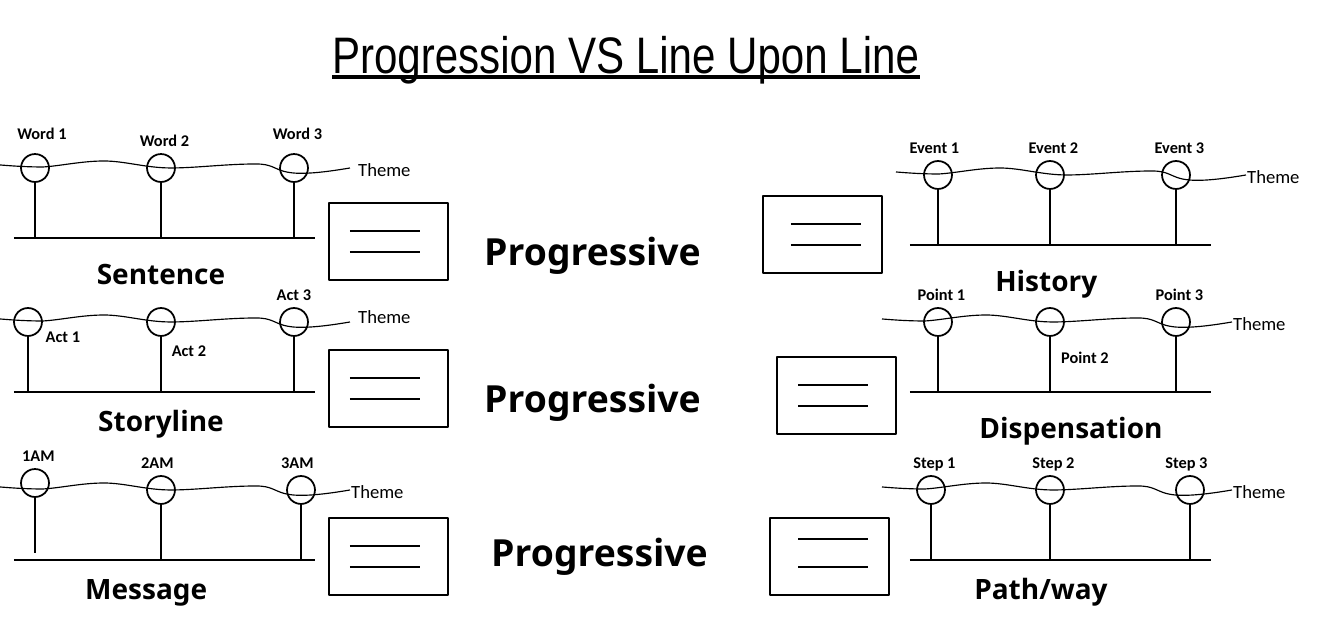
"""Build the slide that compares progression with line upon line."""
import dataclasses

import lxml.etree
import pptx
import pptx.dml.color
import pptx.enum.shapes
import pptx.enum.text
import pptx.oxml.ns
import pptx.util

PX = 914400 / 84
BLACK = "000000"
CIRCLE = 28
POST_HEIGHT = 56
BASE_LENGTH = 301
WAVE_RISE = 77
BOX_WIDTH, BOX_HEIGHT = 119, 77
DASH_LENGTH = 70
WAVE = [(0, 4), (13, 5), (26, 6), (43, 6), (60, 5), (82, 0), (104, 0), (125, 0),
        (146, 7), (171, 7), (196, 7), (226, 3), (256, 3), (286, 3), (268, 21), (350, 7)]
LEFT = pptx.enum.text.PP_ALIGN.LEFT
CENTER = pptx.enum.text.PP_ALIGN.CENTER
SHAPES = pptx.enum.shapes.MSO_SHAPE


@dataclasses.dataclass(frozen=True)
class Style:
    font: str
    size: int
    height: int
    bold: bool = True


LABEL = Style("Calibri", 14, 29)
THEME = Style("Calibri", 16, 31, bold=False)
CAPTION = Style("Noto Sans", 24, 42)
HEADING = Style("Noto Sans", 32, 54)


@dataclasses.dataclass(frozen=True)
class Text:
    words: str
    left: int
    top: int
    width: int
    align: pptx.enum.text.PP_ALIGN = CENTER


@dataclasses.dataclass(frozen=True)
class Post:
    label: Text
    left: int
    top: int


@dataclasses.dataclass(frozen=True)
class Timeline:
    caption: Text
    base: tuple[int, int]
    wave_left: int
    theme: tuple[int, int]
    box: tuple[int, int]
    dash_left: int
    dash_tops: tuple[int, int]
    posts: tuple[Post, ...]


TIMELINES = [
    Timeline(Text("Sentence", 70, 252, 182), (14, 238), 0, (350, 154), (329, 203), 350, (231, 252),
             (Post(Text("Word 1", 0, 119, 84), 21, 154),
              Post(Text("Word 2", 112, 126, 105), 147, 154),
              Post(Text("Word 3", 252, 119, 91), 280, 154))),
    Timeline(Text("Storyline", 63, 399, 196), (14, 392), 0, (350, 301), (329, 350), 350, (378, 399),
             (Post(Text("Act 1", 21, 322, 84), 14, 308),
              Post(Text("Act 2", 140, 336, 98), 147, 308),
              Post(Text("Act 3", 252, 280, 84), 280, 308))),
    Timeline(Text("Message", 77, 567, 168, LEFT), (14, 560), 0, (343, 476), (329, 518), 350, (546, 567),
             (Post(Text("1AM", 0, 441, 77), 21, 469),
              Post(Text("2AM", 119, 448, 77), 147, 476),
              Post(Text("3AM", 259, 448, 77), 287, 476))),
    Timeline(Text("History", 987, 259, 147, LEFT), (910, 245), 896, (1239, 161), (763, 196), 791, (224, 245),
             (Post(Text("Event 1", 896, 133, 77), 924, 161),
              Post(Text("Event 2", 1015, 133, 77), 1036, 161),
              Post(Text("Event 3", 1141, 133, 77), 1162, 161))),
    Timeline(Text("Dispensation", 945, 406, 252), (910, 392), 882, (1225, 308), (777, 357), 798, (385, 406),
             (Post(Text("Point 1", 889, 280, 105), 924, 308),
              Post(Text("Point 2", 1036, 343, 98), 1036, 308),
              Post(Text("Point 3", 1141, 280, 77), 1162, 308))),
    Timeline(Text("Path/way", 966, 567, 196, LEFT), (910, 560), 882, (1225, 476), (770, 518), 798, (539, 567),
             (Post(Text("Step 1", 896, 448, 77), 917, 476),
              Post(Text("Step 2", 1015, 448, 77), 1036, 476),
              Post(Text("Step 3", 1148, 448, 77), 1176, 476))),
]
HEADINGS = [Text("Progressive", left, top, 259, LEFT)
            for left, top in ((476, 224), (476, 371), (483, 525))]


def emu(pixels: int) -> int:
    """Turn px into EMU."""
    return pptx.util.Emu(round(pixels * PX))


def color(value: str) -> pptx.dml.color.RGBColor:
    """Turn a hex string into a colour."""
    return pptx.dml.color.RGBColor.from_string(value)


def format_line(shape, width: float) -> None:
    """Give a shape or connector a black line."""
    shape.line.color.rgb = color(BLACK)
    shape.line.width = pptx.util.Pt(width)


def format_outline(shape, weight: float) -> None:
    """Leave a shape with only its line."""
    shape.shadow.inherit = False
    shape.fill.background()
    format_line(shape, weight)


def draw_line(slide, left: int, top: int, width: int = 0, height: int = 0) -> None:
    """Draw a straight line without a shadow."""
    connector = slide.shapes.add_connector(
        pptx.enum.shapes.MSO_CONNECTOR.STRAIGHT,
        emu(left), emu(top), emu(left + width), emu(top + height))
    format_line(connector, 2.25)
    lxml.etree.SubElement(connector._element.spPr, pptx.oxml.ns.qn("a:effectLst"))


def draw_outline(slide, kind, left: int, top: int, width: int, height: int, weight: float) -> None:
    """Draw an unfilled preset shape."""
    shape = slide.shapes.add_shape(kind, emu(left), emu(top), emu(width), emu(height))
    format_outline(shape, weight)


def draw_wave(slide, left: int, top: int) -> None:
    """Draw the theme as a chain of cubic curves."""
    points = [(emu(left + x), emu(top + y)) for x, y in WAVE]
    builder = slide.shapes.build_freeform(*points[0])
    builder.add_line_segments(points[1:], close=False)
    shape = builder.convert_to_shape()
    segments = list(shape._element.iter(pptx.oxml.ns.qn("a:lnTo")))
    outline = segments[0].getparent()
    for start in range(0, len(segments), 3):
        curve = lxml.etree.SubElement(outline, pptx.oxml.ns.qn("a:cubicBezTo"))
        for segment in segments[start:start + 3]:
            curve.append(segment[0])
            outline.remove(segment)
    format_outline(shape, 1)


def format_text(paragraph, style: Style, align: pptx.enum.text.PP_ALIGN) -> None:
    """Set the alignment and font of a paragraph."""
    paragraph.alignment = align
    for run in paragraph.runs:
        run.font.name = style.font
        run.font.size = pptx.util.Pt(style.size)
        run.font.bold = style.bold
        run.font.color.rgb = color(BLACK)


def draw_text(slide, text: Text, style: Style) -> None:
    """Draw one line of text."""
    shape = slide.shapes.add_textbox(emu(text.left), emu(text.top), emu(text.width), emu(style.height))
    shape.text_frame.word_wrap = True
    shape.text_frame.auto_size = pptx.enum.text.MSO_AUTO_SIZE.SHAPE_TO_FIT_TEXT
    shape.text_frame.text = text.words
    format_text(shape.text_frame.paragraphs[0], style, text.align)


def draw_timeline(slide, timeline: Timeline) -> None:
    """Draw a timeline with its posts, theme, box and caption."""
    base_left, base_top = timeline.base
    draw_outline(slide, SHAPES.RECTANGLE, *timeline.box, BOX_WIDTH, BOX_HEIGHT, 2)
    for top in timeline.dash_tops:
        draw_line(slide, timeline.dash_left, top, width=DASH_LENGTH)
    draw_line(slide, base_left, base_top, width=BASE_LENGTH)
    for post in timeline.posts:
        draw_line(slide, post.left + CIRCLE // 2, post.top + CIRCLE, height=POST_HEIGHT)
        draw_outline(slide, SHAPES.OVAL, post.left, post.top, CIRCLE, CIRCLE, 1.5)
        draw_text(slide, post.label, LABEL)
    draw_wave(slide, timeline.wave_left, base_top - WAVE_RISE)
    draw_text(slide, Text("Theme", *timeline.theme, 77, LEFT), THEME)
    draw_text(slide, timeline.caption, CAPTION)


def draw_title(slide) -> None:
    """Place and format the title."""
    title = slide.shapes.title
    title.left, title.top, title.width, title.height = map(emu, (21, 0, 1210, 105))
    title.text_frame.text = "Progression VS Line Upon Line"
    title.text_frame.vertical_anchor = pptx.enum.text.MSO_ANCHOR.MIDDLE
    paragraph = title.text_frame.paragraphs[0]
    format_text(paragraph, Style("Arial Narrow", 44, 105, bold=False), CENTER)
    paragraph.runs[0].font.underline = True


def main() -> None:
    """Build and save the presentation."""
    presentation = pptx.Presentation()
    presentation.slide_width, presentation.slide_height = emu(1344), emu(630)
    slide = presentation.slides.add_slide(presentation.slide_layouts.get_by_name("Title Only"))
    draw_title(slide)
    for timeline in TIMELINES:
        draw_timeline(slide, timeline)
    for heading in HEADINGS:
        draw_text(slide, heading, HEADING)
    presentation.save("out.pptx")


if __name__ == "__main__":
    main()
